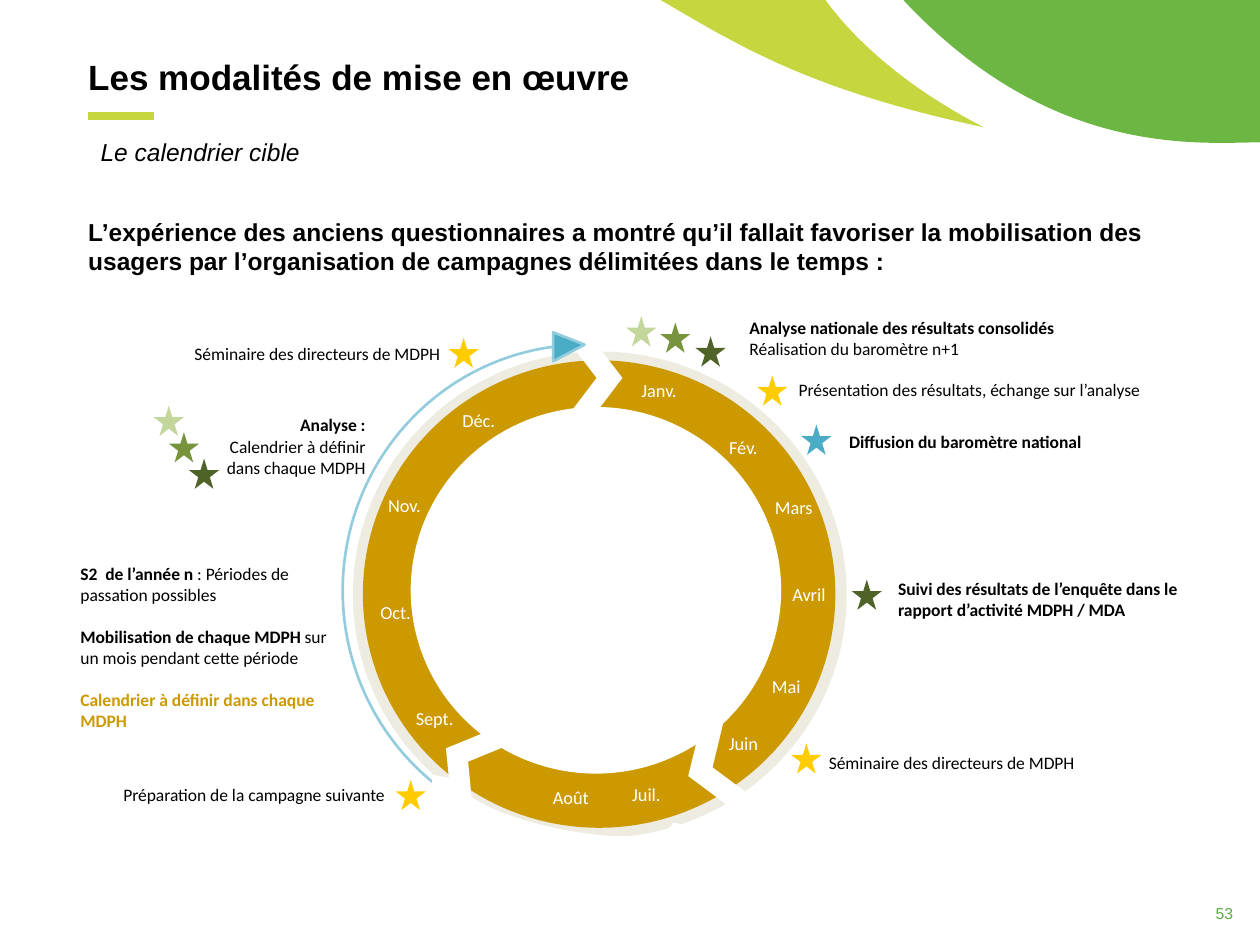
from dataclasses import dataclass
from typing import NamedTuple

from lxml.etree import Element, SubElement
from pptx import Presentation
from pptx.dml.color import RGBColor
from pptx.enum.shapes import MSO_CONNECTOR, MSO_SHAPE as Preset
from pptx.enum.text import MSO_AUTO_SIZE as AutoSize, PP_ALIGN as Align
from pptx.oxml.ns import qn
from pptx.util import Inches, Pt

SLIDE_WIDTH, SLIDE_HEIGHT = Inches(10), Inches(7.5)
COLUMN, ROW = SLIDE_WIDTH / 10, SLIDE_HEIGHT / 7.5
STAR_SIZE = 0.24
COLORS = {
    "black": "000000", "white": "FFFFFF", "green": "6CB643", "lime": "C6D63F",
    "number": "5AAB45", "gold": "CC9900", "shade": "EEECE1", "sky": "93CDDD",
    "light": "C3D69B", "medium": "77933C", "dark": "4F6228",
    "yellow": "FFCC00", "blue": "4BACC6",
}
Point = tuple[float, float]


class Box(NamedTuple):
    """Left, top, width and height in grid columns and rows."""
    left: float
    top: float
    width: float
    height: float

    def lengths(self) -> tuple[int, ...]:
        units = (COLUMN, ROW, COLUMN, ROW)
        return tuple(round(value * unit) for value, unit in zip(self, units))


class Run(NamedTuple):
    text: str
    bold: bool = False
    italic: bool = False
    color: str = "black"


@dataclass
class Label:
    box: Box
    paragraphs: list[list[Run]]
    size: float = 10
    font: str = "Calibri"
    align: Align = Align.LEFT
    gap: float = 0
    inset: float = 0.1
    wrap: bool = True
    fit: AutoSize = AutoSize.SHAPE_TO_FIT_TEXT


@dataclass
class Heading(Label):
    font: str = "Arial"
    inset: float = 0
    fit: AutoSize = AutoSize.NONE


class Star(NamedTuple):
    left: float
    top: float
    color: str


class RingPart(NamedTuple):
    preset: Preset
    box: Box
    color: str = "white"
    rotation: float = 0


class Month(NamedTuple):
    name: str
    left: float
    top: float


class Swoosh(NamedTuple):
    """An outline whose segments hold one point (line) or three (cubic curve)."""
    start: Point
    segments: list[list[Point]]
    color: str


SWOOSHES = [
    Swoosh((10, -0.12), [[(10, 0.07), (10, 0.81), (10, 1.13)],
                         [(9.51, 1.13), (8.28, 1.27), (7.07, -0.11)]], "green"),
    Swoosh((5.05, -0.11), [[(6.48, -0.11)],
                           [(6.48, -0.11), (6.81, 0.5), (7.81, 1.01)],
                           [(6.26, 0.68), (5.75, 0.28), (5.05, -0.11)]], "lime"),
]
RING = [
    RingPart(Preset.OVAL, Box(2.8, 2.79, 3.92, 3.86), "shade"),
    RingPart(Preset.OVAL, Box(2.88, 2.86, 3.75, 3.71), "gold"),
    RingPart(Preset.CHEVRON, Box(4.53, 2.73, 0.41, 0.54)),
    RingPart(Preset.CHEVRON, Box(5.45, 5.78, 0.41, 0.62), rotation=160.2),
    RingPart(Preset.CHEVRON, Box(3.51, 5.77, 0.41, 0.55), rotation=211.1),
]
RING_COVER = [
    RingPart(Preset.BLOCK_ARC, Box(3.41, 5.91, 2.17, 0.9), rotation=191.3),
    RingPart(Preset.OVAL, Box(3.26, 3.23, 2.94, 2.91)),
]
MONTHS = [
    Month("Janv.", 4.94, 2.96), Month("Fév.", 5.61, 3.41), Month("Mars", 6.01, 3.89),
    Month("Avril", 6.13, 4.58), Month("Mai", 5.95, 5.31), Month("Juin", 5.61, 5.76),
    Month("Juil.", 4.84, 6.17), Month("Août", 4.24, 6.19), Month("Sept.", 3.16, 5.56),
    Month("Oct.", 2.85, 4.72), Month("Nov.", 2.92, 3.87), Month("Déc.", 3.51, 3.2),
]
STARS = [
    Star(4.97, 2.51, "light"), Star(5.24, 2.56, "medium"), Star(5.52, 2.67, "dark"),
    Star(1.22, 3.22, "light"), Star(1.34, 3.43, "medium"), Star(1.5, 3.64, "dark"),
    Star(6.01, 2.98, "yellow"), Star(6.36, 3.37, "blue"), Star(6.76, 4.6, "dark"),
    Star(6.28, 5.9, "yellow"), Star(3.14, 6.19, "yellow"), Star(3.56, 2.68, "yellow"),
]
HEADINGS = [
    Heading(Box(0.7, 0.39, 8.63, 0.53), [[Run("Les modalités de mise en œuvre", bold=True)]],
            size=20),
    Heading(Box(0.7, 1.04, 9.02, 0.53), [[Run("Le calendrier cible", italic=True)]],
            size=14, inset=0.1),
    Heading(Box(0.7, 1.67, 8.63, 0.48),
            [[Run("L’expérience des anciens questionnaires a montré qu’il fallait favoriser la "
                  "mobilisation des usagers par l’organisation de campagnes délimitées dans le "
                  "temps :", bold=True)]], size=14),
    Heading(Box(9.55, 7.12, 0.45, 0.28), [[Run("53", color="number")]], size=9, inset=0.1),
]
SEMINAR = [[Run("Séminaire des directeurs de MDPH")]]
EVENTS = [
    Label(Box(5.85, 2.47, 2.76, 0.44),
          [[Run("Analyse nationale des résultats consolidés", bold=True)],
           [Run("Réalisation du baromètre n+1")]]),
    Label(Box(0.54, 4.42, 2.26, 1.62),
          [[Run("S2  de l’année n ", bold=True), Run(": Périodes de passation possibles")],
           [Run("Mobilisation de chaque MDPH ", bold=True),
            Run("sur un mois pendant cette période")],
           [Run("Calendrier à définir dans chaque MDPH", bold=True, color="gold")]], gap=12),
    Label(Box(6.24, 2.96, 3.64, 0.27),
          [[Run("Présentation des résultats, échange sur l’analyse")]]),
    Label(Box(6.64, 3.37, 2.08, 0.27), [[Run("Diffusion du baromètre national", bold=True)]],
          wrap=False),
    Label(Box(1.34, 3.24, 1.69, 0.61),
          [[Run("Analyse : ", bold=True)], [Run("Calendrier à définir ")],
           [Run("dans chaque MDPH ")]], align=Align.RIGHT),
    Label(Box(0.25, 6.17, 2.9, 0.27), [[Run("Préparation de la campagne suivante")]],
          align=Align.RIGHT),
    Label(Box(7.03, 4.54, 2.76, 0.44),
          [[Run("Suivi des résultats de l’enquête dans le rapport d’activité MDPH / MDA",
                bold=True)]]),
    Label(Box(0.69, 2.67, 2.9, 0.27), SEMINAR, align=Align.RIGHT),
    Label(Box(6.48, 5.92, 2.9, 0.27), SEMINAR),
]


def rgb(name: str) -> RGBColor:
    return RGBColor.from_string(COLORS[name])


def paint(shape, color: str) -> None:
    shape.shadow.inherit = False
    shape.fill.solid()
    shape.fill.fore_color.rgb = rgb(color)
    shape.line.fill.background()


def draw_preset(slide, preset: Preset, box: Box, color: str, rotation: float = 0):
    shape = slide.shapes.add_shape(preset, *box.lengths())
    shape.rotation = rotation
    paint(shape, color)
    return shape


def draw_label(slide, label: Label) -> None:
    frame = slide.shapes.add_textbox(*label.box.lengths()).text_frame
    frame.word_wrap, frame.auto_size = label.wrap, label.fit
    frame.margin_left = Inches(label.inset)
    for index, runs in enumerate(label.paragraphs):
        paragraph = frame.add_paragraph() if index else frame.paragraphs[0]
        paragraph.alignment = label.align
        paragraph.space_before = Pt(label.gap if index else 0)
        for item in runs:
            run = paragraph.add_run()
            run.text = item.text
            font = run.font
            font.name, font.size = label.font, Pt(label.size)
            font.bold, font.italic = item.bold, item.italic
            font.color.rgb = rgb(item.color)


def to_lengths(point: Point) -> tuple[int, int]:
    return round(point[0] * COLUMN), round(point[1] * ROW)


def draw_swoosh(slide, swoosh: Swoosh) -> None:
    """Join the anchors with lines, then bend those that have control points."""
    builder = slide.shapes.build_freeform(*to_lengths(swoosh.start))
    builder.add_line_segments([to_lengths(segment[-1]) for segment in swoosh.segments])
    shape = builder.convert_to_shape()
    lines = list(shape._element.iter(qn("a:lnTo")))
    for line, segment in zip(lines, swoosh.segments):
        if len(segment) == 3:
            curve = Element(qn("a:cubicBezTo"))
            for x, y in map(to_lengths, segment):
                SubElement(curve, qn("a:pt"), x=str(x - shape.left), y=str(y - shape.top))
            line.getparent().replace(line, curve)
    paint(shape, swoosh.color)


def draw_title_rule(slide) -> None:
    rule = slide.shapes.add_connector(MSO_CONNECTOR.STRAIGHT,
                                      *to_lengths((0.7, 0.92)), *to_lengths((1.22, 0.92)))
    rule.line.color.rgb = rgb("lime")
    rule.line.width = Pt(4.5)
    SubElement(rule._element.spPr, qn("a:effectLst"))


def draw_cycle_arrow(slide) -> None:
    arrow = draw_preset(slide, Preset.CURVED_UP_ARROW, Box(1.67, 3.67, 4.02, 1.92), "blue", 90)
    for index, value in enumerate((0, 0.12, 0.13)):
        arrow.adjustments[index] = value
    arrow._element.spPr.find(qn("a:xfrm")).set("flipH", "1")
    arrow.line.color.rgb = rgb("sky")
    arrow.line.width = Pt(1.5)


def main() -> None:
    presentation = Presentation()
    presentation.slide_width, presentation.slide_height = SLIDE_WIDTH, SLIDE_HEIGHT
    slide = presentation.slides.add_slide(presentation.slide_layouts[6])
    for swoosh in SWOOSHES:
        draw_swoosh(slide, swoosh)
    draw_title_rule(slide)
    for part in RING:
        draw_preset(slide, *part)
    draw_cycle_arrow(slide)
    for part in RING_COVER:
        draw_preset(slide, *part)
    for name, left, top in MONTHS:
        draw_label(slide, Label(Box(left, top, 0.58, 0.29), [[Run(name, color="white")]],
                                size=10.5, align=Align.CENTER))
    for left, top, color in STARS:
        draw_preset(slide, Preset.STAR_5_POINT, Box(left, top, STAR_SIZE, STAR_SIZE), color)
    for label in HEADINGS + EVENTS:
        draw_label(slide, label)
    presentation.save("out.pptx")


if __name__ == "__main__":
    main()
